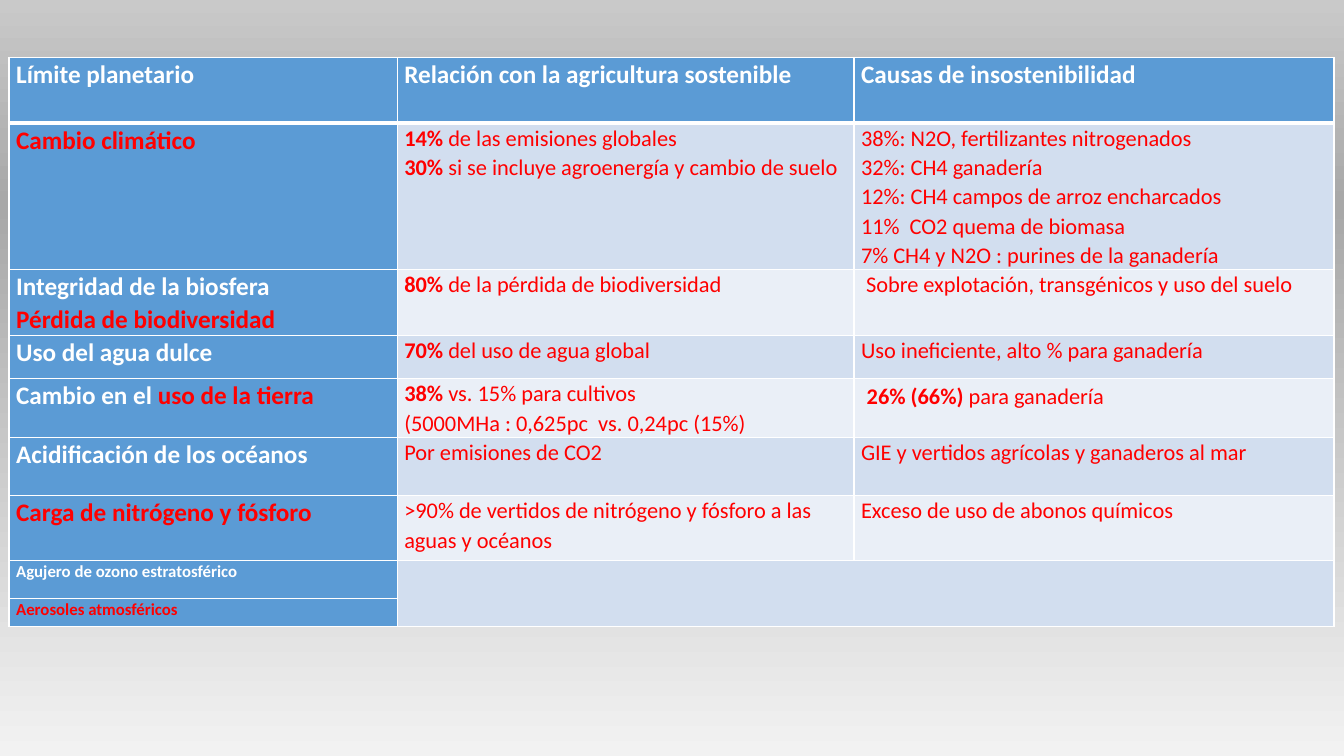
from lxml.etree import SubElement
from pptx import Presentation
from pptx.dml.color import RGBColor
from pptx.oxml import parse_xml
from pptx.oxml.ns import nsdecls, qn
from pptx.util import Inches, Pt

WHITE, RED, BLACK = "FFFFFF", "FF0000", "000000"
BLUE, BANDS = "5B9BD5", ("D2DEEF", "EAEFF7")

# Text styles of the table
NAME = dict(size=18, color=WHITE, bold=True)
KEY = dict(size=18, color=RED, bold=True)
MINOR = dict(size=12, color=WHITE, bold=True)
MINOR_KEY = dict(size=12, color=RED, bold=True)
FIGURE = dict(size=16, color=RED, bold=True)
BODY = dict(size=16, color=RED, bold=False)
GAP = dict(size=16, color=BLACK, bold=False)
WIDE_GAP = dict(size=18, color=BLACK, bold=False)

COLUMNS = (3.85, 4.53, 4.76)
HEIGHTS = (0.65, 1.45, 0.65, 0.43, 0.58, 0.58, 0.64, 0.38, 0.28)


def line(text, style):
    return [(text, style)]


def figure(number, text):
    return [(number, FIGURE), (text, BODY)]


# Each row holds cells, each cell holds paragraphs, each paragraph holds spans
ROWS = [
    [[line("Límite planetario", NAME)],
     [line("Relación con la agricultura sostenible", NAME)],
     [line("Causas de insostenibilidad", NAME)]],
    [[line("Cambio climático", KEY)],
     [figure("14% ", "de las emisiones globales"),
      figure("30% ", "si se incluye agroenergía y cambio de suelo")],
     [line("38%: N2O, fertilizantes nitrogenados", BODY),
      line("32%: CH4 ganadería", BODY),
      line("12%: CH4 campos de arroz encharcados", BODY),
      line("11%  CO2 quema de biomasa", BODY),
      line("7% CH4 y N2O : purines de la ganadería", BODY)]],
    [[line("Integridad de la biosfera", NAME), line("Pérdida de biodiversidad", KEY)],
     [figure("80% ", "de la pérdida de biodiversidad")],
     [[(" ", GAP), ("Sobre explotación, transgénicos y uso del suelo", BODY)]]],
    [[line("Uso del agua dulce", NAME)],
     [figure("70% ", "del uso de agua global")],
     [line("Uso ineficiente, alto % para ganadería", BODY)]],
    [[[("Cambio en el ", NAME), ("uso de la tierra", KEY)]],
     [figure("38% ", "vs. 15% para cultivos"),
      line("(5000MHa : 0,625pc  vs. 0,24pc (15%)", BODY)],
     [[(" ", WIDE_GAP)] + figure("26% (66%) ", "para ganadería")]],
    [[line("Acidificación de los océanos", NAME)],
     [line("Por emisiones de CO2", BODY)],
     [line("GIE y vertidos agrícolas y ganaderos al mar", BODY)]],
    [[line("Carga de nitrógeno y fósforo", KEY)],
     [line(">90% de vertidos de nitrógeno y fósforo a las aguas y océanos", BODY)],
     [line("Exceso de uso de abonos químicos", BODY)]],
    [[line("Agujero de ozono estratosférico", MINOR)], [], []],
    [[line("Aerosoles atmosféricos", MINOR_KEY)], [], []],
]


def rgb(value):
    return RGBColor.from_string(value)


def add_span(para, text, size, color, bold):
    span = para.add_run()
    span.text = text
    span.font.name = "Calibri"
    span.font.size = Pt(size)
    span.font.bold = bold
    span.font.color.rgb = rgb(color)


def set_borders(cell, top, bottom):
    """Draw white borders; top and bottom widths are in points."""
    properties = cell._tc.get_or_add_tcPr()
    widths = {"a:lnL": 1, "a:lnR": 1, "a:lnT": top, "a:lnB": bottom}
    for tag, width in widths.items():
        border = SubElement(properties, qn(tag), w=str(Pt(width)))
        fill = SubElement(border, qn("a:solidFill"))
        SubElement(fill, qn("a:srgbClr"), val=WHITE)


def fill_cell(cell, paragraphs, fill):
    cell.margin_left = cell.margin_right = Inches(0.07)
    cell.margin_top = cell.margin_bottom = 0
    cell.fill.solid()
    cell.fill.fore_color.rgb = rgb(fill)
    frame = cell.text_frame
    for index, spans in enumerate(paragraphs):
        para = frame.paragraphs[0] if index == 0 else frame.add_paragraph()
        para.line_spacing = 1.07
        for text, style in spans:
            add_span(para, text, **style)


def add_limits_table(page, left, top):
    table = page.shapes.add_table(
        len(ROWS), len(COLUMNS), Inches(left), Inches(top),
        Inches(sum(COLUMNS)), Inches(sum(HEIGHTS))).table
    for column, width in zip(table.columns, COLUMNS):
        column.width = Inches(width)
    for row, height in zip(table.rows, HEIGHTS):
        row.height = Inches(height)
    table.cell(7, 1).merge(table.cell(8, 2))
    for r, cells in enumerate(ROWS):
        band = BANDS[(min(r, 7) - 1) % 2]
        for c, paragraphs in enumerate(cells):
            cell = table.cell(r, c)
            set_borders(cell, 3 if r == 1 else 1, 3 if r == 0 else 1)
            fill_cell(cell, paragraphs, BLUE if r == 0 or c == 0 else band)


def set_background(page, stops):
    """Shade the page from bottom to top through (percent, color) stops."""
    marks = "".join(f'<a:gs pos="{percent * 1000}"><a:srgbClr val="{color}"/></a:gs>'
                    for percent, color in stops)
    page.element.cSld.insert(0, parse_xml(
        f'<p:bg {nsdecls("p", "a")}><p:bgPr><a:gradFill rotWithShape="1">'
        f'<a:gsLst>{marks}</a:gsLst><a:lin ang="16200000" scaled="0"/>'
        '</a:gradFill><a:effectLst/></p:bgPr></p:bg>'))


def main():
    deck = Presentation()
    deck.slide_width, deck.slide_height = Inches(13.33), Inches(7.5)
    page = deck.slides.add_slide(deck.slide_layouts[6])
    set_background(page, [(0, "F2F2F2"), (73, "A8A8A8"), (100, "C9C9C9")])
    add_limits_table(page, left=0.09, top=0.57)
    deck.save("out.pptx")


if __name__ == "__main__":
    main()
